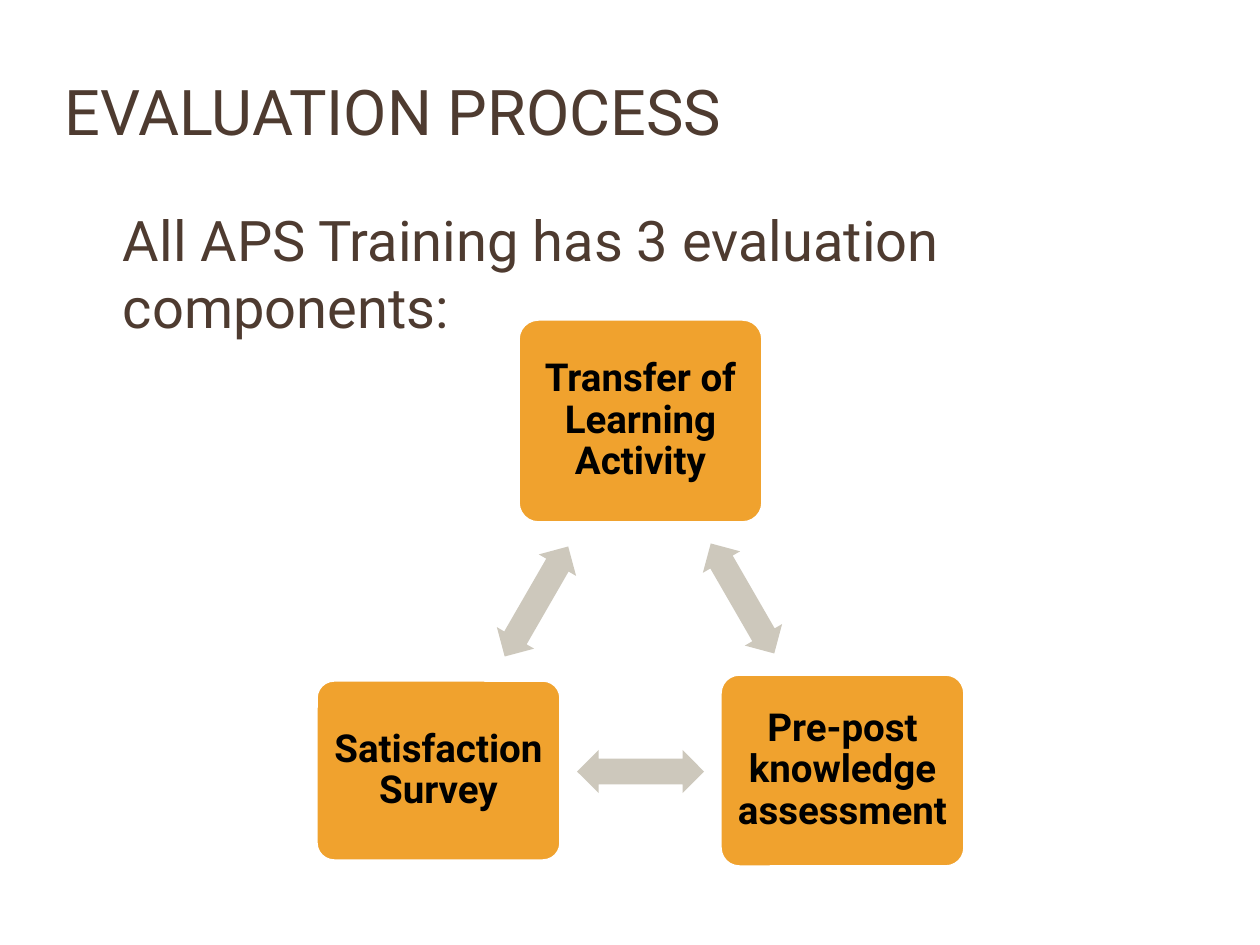
from pptx import Presentation
from pptx.dml.color import RGBColor
from pptx.enum.shapes import MSO_SHAPE
from pptx.enum.text import MSO_ANCHOR, PP_ALIGN
from pptx.util import Pt

PX = 914400 / 126
FONT = "Roboto"
BROWN = RGBColor(0x4E, 0x3B, 0x30)
GOLD = RGBColor(0xF0, 0xA2, 0x2E)
STONE = RGBColor(0xCD, 0xC8, 0xBC)
WHITE = RGBColor(0xFF, 0xFF, 0xFF)
BLACK = RGBColor(0x00, 0x00, 0x00)
BOX = MSO_SHAPE.ROUNDED_RECTANGLE
ARROW = MSO_SHAPE.LEFT_RIGHT_ARROW
MIDDLE = MSO_ANCHOR.MIDDLE
TOP = MSO_ANCHOR.TOP
CENTER = PP_ALIGN.CENTER


def px(*sizes):
    return [round(size * PX) for size in sizes]


def write(shape, text, size, color, anchor, left, right):
    frame = shape.text_frame
    frame.word_wrap = True
    frame.vertical_anchor = anchor
    frame.margin_left, frame.margin_right = px(left, right)
    para = frame.paragraphs[0]
    para.text = text
    para.font.name = FONT
    para.font.size = Pt(size)
    para.font.color.rgb = color
    return para


deck = Presentation()
deck.slide_width, deck.slide_height = px(1260, 945)
slide = deck.slides.add_slide(deck.slide_layouts[6])
shapes = slide.shapes

title = shapes.add_textbox(*px(53, 32, 1134, 157))
write(title, "EVALUATION PROCESS", 36, BROWN, MIDDLE, 12, 12)

body = shapes.add_textbox(*px(63, 199, 1134, 357))
lead = write(body, "All APS Training has 3 evaluation components:", 32, BROWN, TOP, 60, 12)
lead.space_before = Pt(2)

STEPS = [
    ("Transfer of Learning Activity", 518, 319, 204),
    ("Pre-post knowledge assessment", 720, 674, 193),
    ("Satisfaction Survey", 316, 680, 181),
]
for text, left, top, height in STEPS:
    box = shapes.add_shape(BOX, *px(left, top, 245, height))
    box.adjustments[0] = 0.1
    box.shadow.inherit = False
    box.fill.solid()
    box.fill.fore_color.rgb = GOLD
    box.line.color.rgb = WHITE
    box.line.width = Pt(2)
    para = write(box, text, 22, BLACK, MIDDLE, 6, 6)
    para.font.bold = True
    para.alignment = CENTER
    para.line_spacing = 0.9

for left, top, turn in [(679, 577, 60), (577, 750, 180), (473, 580, 300)]:
    arrow = shapes.add_shape(ARROW, *px(left, top, 127, 43))
    arrow.adjustments[0] = 0.6
    arrow.adjustments[1] = 0.5
    arrow.rotation = turn
    arrow.shadow.inherit = False
    arrow.fill.solid()
    arrow.fill.fore_color.rgb = STONE
    arrow.line.fill.background()

deck.save("out.pptx")
